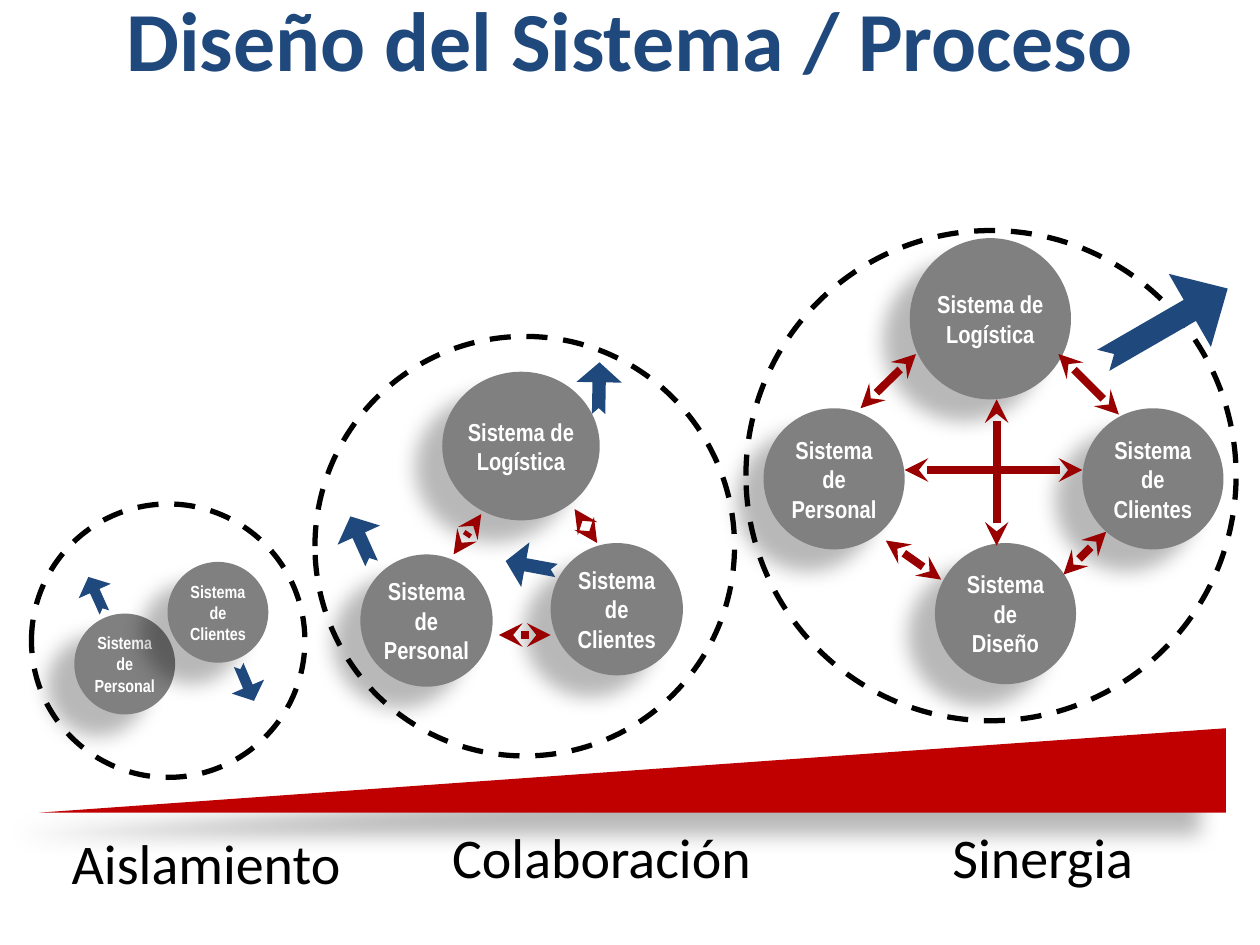
from lxml.etree import SubElement
from pptx import Presentation
from pptx.dml.color import RGBColor
from pptx.enum.dml import MSO_LINE
from pptx.enum.shapes import MSO_CONNECTOR, MSO_SHAPE
from pptx.enum.text import MSO_ANCHOR, MSO_AUTO_SIZE, PP_ALIGN
from pptx.oxml.ns import qn
from pptx.util import Pt

SCALE = 9144
NAVY = RGBColor(0x1F, 0x49, 0x7D)
GRAY = RGBColor(0x80, 0x80, 0x80)
RED = RGBColor(0xC0, 0x00, 0x00)
DARK = RGBColor(0x99, 0x00, 0x00)
BLACK = RGBColor(0, 0, 0)
WHITE = RGBColor(255, 255, 255)


def px(*nums):
    return [num * SCALE for num in nums]


def write(frame, text, size, color, font="Calibri", bold=False,
          align=PP_ALIGN.LEFT, anchor=MSO_ANCHOR.TOP, wrap=True,
          fit=MSO_AUTO_SIZE.NONE, inset=None):
    frame.auto_size = fit
    frame.word_wrap = wrap
    frame.vertical_anchor = anchor
    if inset is not None:
        frame.margin_left = frame.margin_right = 0
        frame.margin_top = frame.margin_bottom = inset * SCALE
    frame.text = text
    for par in frame.paragraphs:
        par.alignment = align
        for run in par.runs:
            run.font.name = font
            run.font.size = Pt(size)
            run.font.bold = bold
            run.font.color.rgb = color


class Deck:
    def __init__(self):
        self.show = Presentation()
        self.show.slide_width, self.show.slide_height = px(1000, 750)
        self.slide = self.show.slides.add_slide(self.show.slide_layouts[5])
        self.shapes = self.slide.shapes

    def title(self, text, *box):
        shape = self.slide.shapes.title
        shape.left, shape.top, shape.width, shape.height = px(*box)
        write(shape.text_frame, text, 48, NAVY, bold=True,
              align=PP_ALIGN.CENTER, anchor=MSO_ANCHOR.MIDDLE)

    def group(self):
        self.shapes = self.slide.shapes.add_group_shape().shapes

    def close(self):
        self.shapes = self.slide.shapes

    def form(self, kind, box, fill=None):
        shape = self.shapes.add_shape(kind, *px(*box))
        shape.shadow.inherit = False
        shape.line.fill.background()
        if fill is None:
            shape.fill.background()
        else:
            shape.fill.solid()
            shape.fill.fore_color.rgb = fill
        return shape

    def shade(self, shape):
        effects = shape._element.spPr.find(qn("a:effectLst"))
        outer = SubElement(effects, qn("a:outerShdw"), blurRad=str(Pt(11.8)),
                           dist=str(Pt(19.7)), dir=str(141 * 60000),
                           algn="ctr", rotWithShape="0")
        color = SubElement(outer, qn("a:srgbClr"), val=str(BLACK))
        SubElement(color, qn("a:alpha"), val="28000")

    def ball(self, text, x, y, wide, high=None, size=14, inset=5):
        shape = self.form(MSO_SHAPE.OVAL, (x, y, wide, high or wide), GRAY)
        self.shade(shape)
        write(shape.text_frame, text, size, WHITE, font="Arial Narrow",
              bold=True, align=PP_ALIGN.CENTER, anchor=MSO_ANCHOR.MIDDLE,
              inset=inset)

    def ring(self, x, y, size):
        line = self.form(MSO_SHAPE.OVAL, (x, y, size, size)).line
        line.color.rgb = BLACK
        line.width = Pt(3)
        line.dash_style = MSO_LINE.DASH

    def arrow(self, turn, *box, thick=0.295, tip=0.44):
        shape = self.form(MSO_SHAPE.NOTCHED_RIGHT_ARROW, box, NAVY)
        shape.rotation = turn
        shape.adjustments[0] = thick
        shape.adjustments[1] = tip

    def link(self, *ends):
        wire = self.shapes.add_connector(MSO_CONNECTOR.STRAIGHT, *px(*ends))
        wire.line.color.rgb = DARK
        wire.line.width = Pt(4.5)
        line = wire.line._get_or_add_ln()
        for end in ("a:headEnd", "a:tailEnd"):
            SubElement(line, qn(end), type="stealth")
        SubElement(wire._element.spPr, qn("a:effectLst"))

    def wedge(self, *box):
        shape = self.form(MSO_SHAPE.ISOSCELES_TRIANGLE, box, RED)
        shape.adjustments[0] = 1
        self.shade(shape)

    def label(self, text, *box):
        shape = self.shapes.add_textbox(*px(*box))
        write(shape.text_frame, text, 32, BLACK, wrap=False,
              fit=MSO_AUTO_SIZE.SHAPE_TO_FIT_TEXT)


STAFF = "Sistema de Personal"
CLIENT = "Sistema de Clientes"
GOODS = "Sistema de Logística"
DESIGN = "Sistema de\nDiseño"


def main():
    deck = Deck()
    deck.title("Diseño del Sistema / Proceso", 75, 13, 850, 35)

    deck.group()
    deck.ball(STAFF, 59, 487, 80, size=10)
    deck.ball(CLIENT, 133, 446, 80, size=10)
    deck.arrow(245.7, 61, 458, 31, 28)
    deck.arrow(66.8, 180, 528, 31, 28)
    deck.ring(25, 400, 217)

    deck.group()
    deck.ball(STAFF, 606, 324, 112)
    deck.ball(CLIENT, 859, 324, 112)
    deck.ring(592, 183, 389)
    deck.ball(GOODS, 722, 189, 128)
    for ends in ((683, 324, 727, 281), (718, 373, 859, 373),
                 (888, 329, 840, 281)):
        deck.link(*ends)
    deck.ball(DESIGN, 742, 431, 112)
    deck.arrow(330, 868, 224, 114, 67, thick=0.288, tip=0.518)
    for ends in ((747, 460, 703, 429), (844, 456, 878, 422),
                 (791, 433, 791, 317)):
        deck.link(*ends)

    deck.close()
    deck.wedge(31, 578, 942, 67)

    deck.group()
    deck.ball(STAFF, 286, 440, 105)
    deck.ball(CLIENT, 437, 431, 105)
    deck.arrow(245.7, 266, 410, 41, 37)
    deck.arrow(190.5, 401, 431, 41, 36)
    deck.ring(250, 267, 333)
    deck.ball(GOODS, 351, 295, 125, 118, inset=0)
    deck.arrow(271, 455, 290, 41, 36)
    for ends in ((360, 440, 382, 408), (396, 504, 437, 504),
                 (474, 431, 456, 404)):
        deck.link(*ends)

    deck.close()
    deck.label("Aislamiento", 47, 653, 236, 64)
    deck.label("Colaboración", 349, 648, 260, 64)
    deck.label("Sinergia", 746, 648, 165, 64)
    deck.show.save("out.pptx")


if __name__ == "__main__":
    main()
